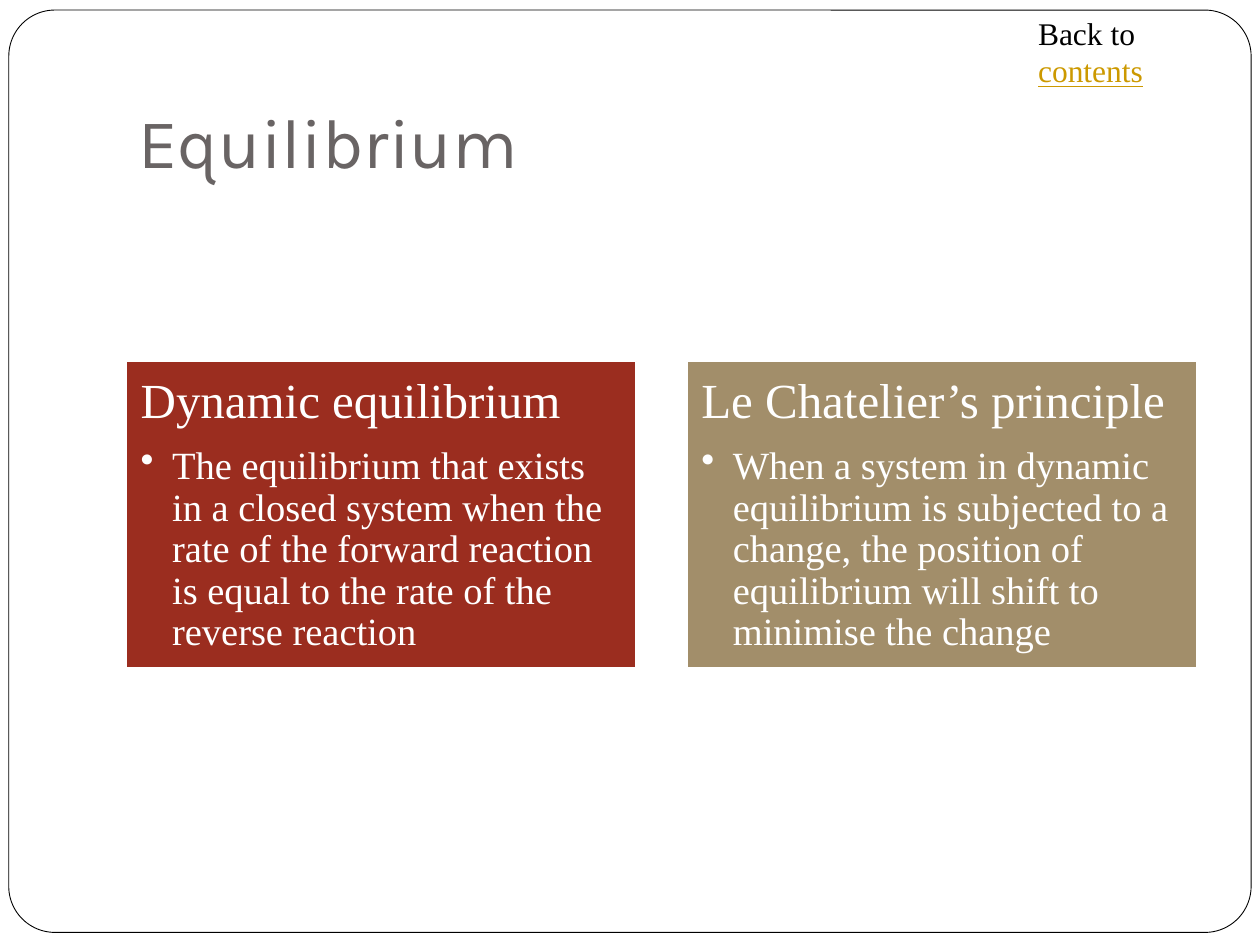
from dataclasses import dataclass

from pptx import Presentation
from pptx.dml.color import RGBColor
from pptx.enum.shapes import MSO_SHAPE as Shape
from pptx.enum.text import MSO_ANCHOR as Anchor, MSO_AUTO_SIZE as AutoSize, PP_ALIGN as Align
from pptx.oxml.ns import qn
from pptx.util import Pt
from lxml.etree import SubElement


@dataclass(frozen=True)
class Theme:
    title_font: str = "Karla"
    body_font: str = "Times New Roman"
    title_size: int = 40
    heading_size: int = 28
    body_size: int = 22
    link_size: int = 18
    white: str = "FFFFFF"
    black: str = "000000"
    title: str = "696464"
    red: str = "9B2D1F"
    tan: str = "A28E6A"
    link: str = "CC9900"


THEME = Theme()
CARD_LEFT, CARD_TOP, CARD_WIDTH, CARD_HEIGHT = 72, 206.64, 291.6, 174.96
CARD_STEP = 320.4
BULLET_INDENT = 18
CARDS = [
    (THEME.red, "Dynamic equilibrium",
     "The equilibrium that exists in a closed system when the rate of the "
     "forward reaction is equal to the rate of the reverse reaction"),
    (THEME.tan, "Le Chatelier’s principle",
     "When a system in dynamic equilibrium is subjected to a change, the "
     "position of equilibrium will shift to minimise the change"),
]


def add_run(paragraph, text, size, color, font=THEME.body_font, underline=None):
    run = paragraph.add_run()
    run.text = text
    run.font.name = font
    run.font.size = Pt(size)
    run.font.color.rgb = RGBColor.from_string(color)
    run.font.underline = underline


def set_frame(frame, anchor, left, top, right, bottom):
    frame.word_wrap = True
    frame.auto_size = AutoSize.NONE
    frame.vertical_anchor = anchor
    frame.margin_left, frame.margin_top = Pt(left), Pt(top)
    frame.margin_right, frame.margin_bottom = Pt(right), Pt(bottom)


def add_block(slide, kind, box, fill, line, line_width):
    shape = slide.shapes.add_shape(kind, *map(Pt, box))
    shape.shadow.inherit = False
    shape.fill.solid()
    shape.fill.fore_color.rgb = RGBColor.from_string(fill)
    shape.line.color.rgb = RGBColor.from_string(line)
    shape.line.width = Pt(line_width)
    return shape


def add_border(slide):
    border = add_block(slide, Shape.ROUNDED_RECTANGLE, (5.04, 5.76, 709.92, 527.04),
                       THEME.white, THEME.black, 0.5)
    border.adjustments[0] = 0.05
    slide.shapes.element.insert(2, border.element)


def set_title(slide, text):
    title = slide.shapes.title
    title.left, title.top, title.width, title.height = map(Pt, (72, 21.6, 612, 90))
    set_frame(title.text_frame, Anchor.BOTTOM, 7.2, 3.6, 7.2, 7.2)
    paragraph = title.text_frame.paragraphs[0]
    paragraph.alignment = Align.LEFT
    add_run(paragraph, text, THEME.title_size, THEME.title, THEME.title_font)


def format_card_paragraph(paragraph, space_after):
    paragraph.alignment = Align.LEFT
    paragraph.line_spacing = 0.9
    paragraph.space_after = Pt(space_after)


def add_bullet(paragraph):
    paragraph.level = 1
    properties = paragraph._p.get_or_add_pPr()
    properties.set("marL", str(Pt(BULLET_INDENT)))
    properties.set("indent", str(-Pt(BULLET_INDENT)))
    SubElement(properties, qn("a:buChar")).set("char", "•")


def add_card(slide, left, fill, heading, body):
    card = add_block(slide, Shape.RECTANGLE, (left, CARD_TOP, CARD_WIDTH, CARD_HEIGHT),
                     fill, THEME.white, 1)
    frame = card.text_frame
    set_frame(frame, Anchor.TOP, 8.4, 8.4, 8.4, 8.4)
    heading_paragraph = frame.paragraphs[0]
    format_card_paragraph(heading_paragraph, 9.8)
    add_run(heading_paragraph, heading, THEME.heading_size, THEME.white)
    body_paragraph = frame.add_paragraph()
    format_card_paragraph(body_paragraph, 3.3)
    add_bullet(body_paragraph)
    add_run(body_paragraph, body, THEME.body_size, THEME.white)


def add_contents_note(slide):
    box = slide.shapes.add_textbox(*map(Pt, (586.08, 4.32, 123.12, 28.8)))
    set_frame(box.text_frame, Anchor.TOP, 7.2, 3.6, 7.2, 3.6)
    paragraph = box.text_frame.paragraphs[0]
    add_run(paragraph, "Back to ", THEME.link_size, THEME.black)
    add_run(paragraph, "contents", THEME.link_size, THEME.link, underline=True)


def main():
    presentation = Presentation()
    presentation.slide_width, presentation.slide_height = Pt(720), Pt(540)
    slide = presentation.slides.add_slide(presentation.slide_layouts[5])
    add_border(slide)
    set_title(slide, "Equilibrium")
    for index, (fill, heading, body) in enumerate(CARDS):
        add_card(slide, CARD_LEFT + index * CARD_STEP, fill, heading, body)
    add_contents_note(slide)
    presentation.save("out.pptx")


if __name__ == "__main__":
    main()
